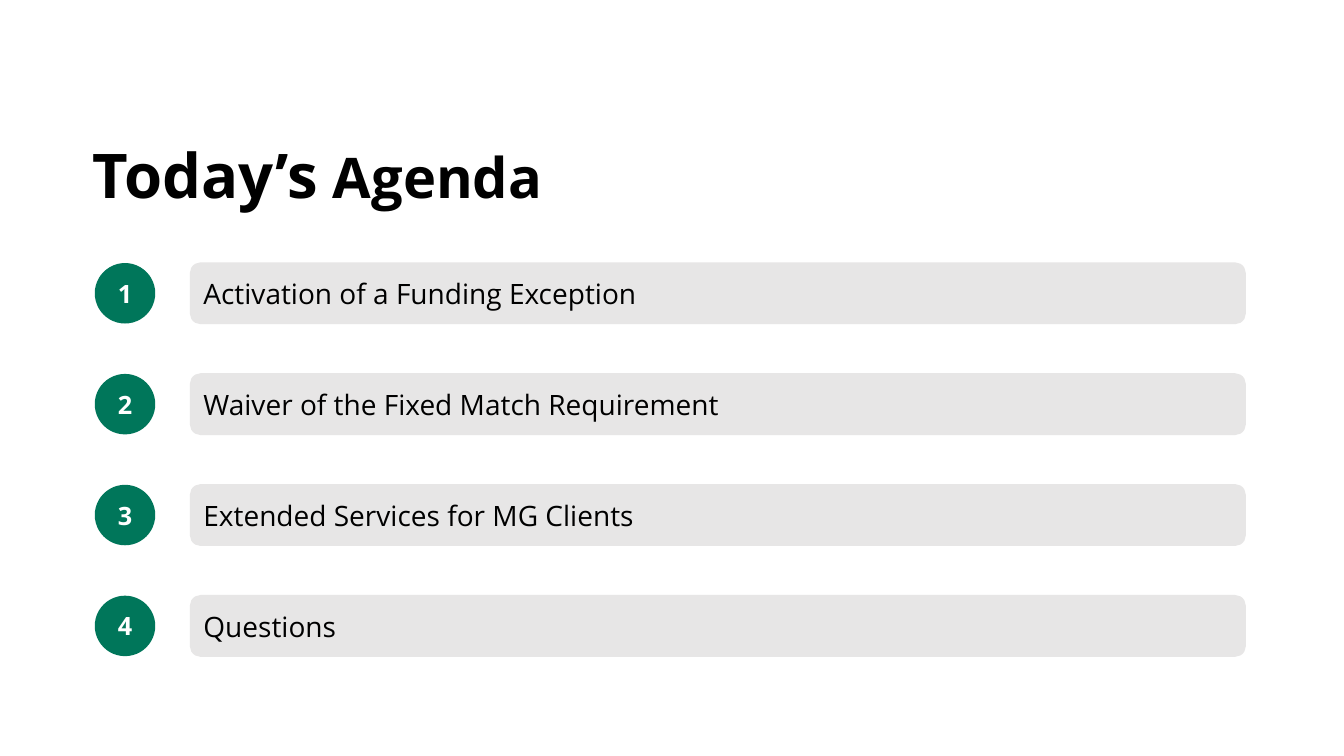
from dataclasses import dataclass

import pptx
import pptx.dml.color
import pptx.enum.shapes
import pptx.enum.text
import pptx.util

Inches = pptx.util.Inches
Shapes = pptx.enum.shapes.MSO_SHAPE
Align = pptx.enum.text.PP_ALIGN
Anchor = pptx.enum.text.MSO_ANCHOR


@dataclass(frozen=True)
class Theme:
    """Colours, font and type sizes of the deck."""
    font: str = "Open Sans"
    ink: str = "000000"
    paper: str = "FFFFFF"
    badge: str = "00765A"
    bar: str = "E7E6E6"
    title_size: int = 44
    subtitle_size: int = 40
    topic_size: int = 20
    number_size: int = 18


THEME = Theme()
TOPICS = [
    "Activation of a Funding Exception",
    "Waiver of the Fixed Match Requirement",
    "Extended Services for MG Clients",
    "Questions",
]


def colour(value):
    """Turn a hex string into a colour."""
    return pptx.dml.color.RGBColor.from_string(value)


def add_span(para, text, size, ink, bold):
    """Append formatted text to a paragraph."""
    span = para.add_run()
    span.text = text
    formats = {"name": THEME.font, "size": pptx.util.Pt(size), "bold": bold}
    for name, value in formats.items():
        setattr(span.font, name, value)
    span.font.color.rgb = colour(ink)


def place_title(page, left, top, width, height):
    """Fit the title placeholder into its box and fill it."""
    title = page.shapes.title
    box = {"left": left, "top": top, "width": width, "height": height}
    for name, value in box.items():
        setattr(title, name, Inches(value))
    formats = {
        "word_wrap": True,
        "vertical_anchor": Anchor.MIDDLE,
        "auto_size": pptx.enum.text.MSO_AUTO_SIZE.SHAPE_TO_FIT_TEXT,
    }
    for name, value in formats.items():
        setattr(title.text_frame, name, value)
    para = title.text_frame.paragraphs[0]
    para.alignment = Align.LEFT
    add_span(para, "Today’s", THEME.title_size, THEME.ink, True)
    add_span(para, " Agenda", THEME.subtitle_size, THEME.ink, True)


def add_panel(page, kind, left, top, width, height, fill, align):
    """Add a filled shape and return it with its paragraph."""
    panel = page.shapes.add_shape(kind, *map(Inches, (left, top, width, height)))
    panel.shadow.inherit = False
    panel.fill.solid()
    panel.fill.fore_color.rgb = colour(fill)
    panel.line.fill.background()
    panel.text_frame.word_wrap = True
    panel.text_frame.vertical_anchor = Anchor.MIDDLE
    para = panel.text_frame.paragraphs[0]
    para.alignment = align
    return panel, para


def place_topic(page, number, topic, left, top, width, height):
    """Place a numbered badge and its topic bar in one row."""
    badge, para = add_panel(page, Shapes.OVAL, left, top, height, height,
                            THEME.badge, Align.CENTER)
    add_span(para, str(number), THEME.number_size, THEME.paper, True)
    indent = height + 0.35
    bar, para = add_panel(page, Shapes.ROUNDED_RECTANGLE, left + indent, top,
                          width - indent, height, THEME.bar, Align.LEFT)
    bar.line.color.rgb = colour(THEME.bar)
    bar.line.width = pptx.util.Pt(1)
    add_span(para, topic, THEME.topic_size, THEME.ink, False)


def place_agenda(page, left, top, width, height):
    """Stack the topics evenly from the top to the bottom of the box."""
    row_height = 0.6
    pitch = (height - row_height) / (len(TOPICS) - 1)
    for index, topic in enumerate(TOPICS):
        place_topic(page, index + 1, topic, left, top + index * pitch,
                    width, row_height)


def main():
    """Build and save the agenda slide."""
    deck = pptx.Presentation()
    deck.slide_width = Inches(13.33)
    deck.slide_height = Inches(7.5)
    page = deck.slides.add_slide(deck.slide_layouts.get_by_name("Title Only"))
    page.background.fill.solid()
    page.background.fill.fore_color.rgb = colour(THEME.paper)
    place_title(page, 0.82, 1.3, 7.28, 0.84)
    place_agenda(page, 0.94, 2.61, 11.41, 3.9)
    deck.save("out.pptx")


if __name__ == "__main__":
    main()
